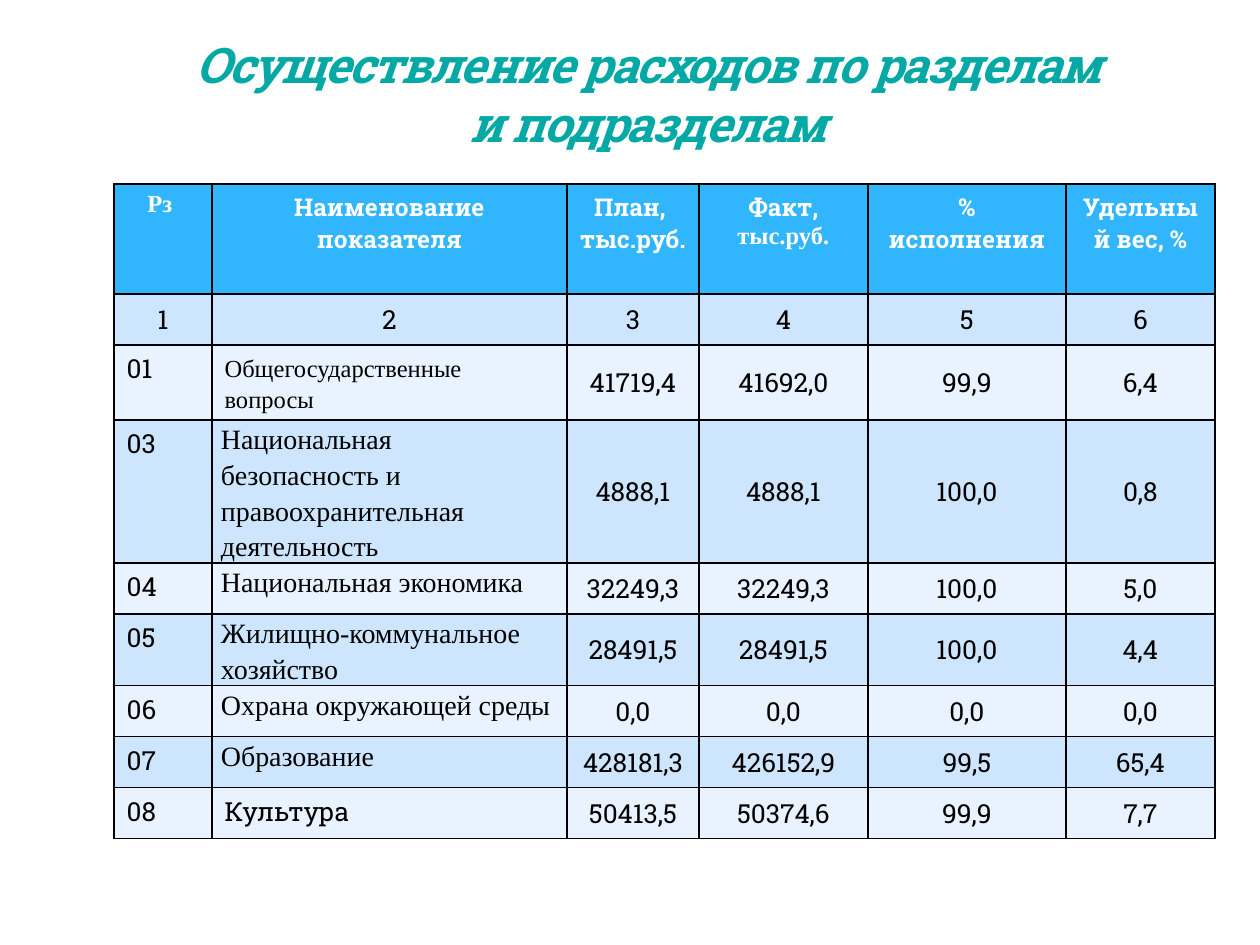
from dataclasses import dataclass
from typing import Optional

from lxml.etree import SubElement
from pptx import Presentation
from pptx.dml.color import RGBColor
from pptx.enum.text import MSO_ANCHOR as Anchor, PP_ALIGN as Align
from pptx.oxml.ns import qn
from pptx.util import Pt

EMU_PER_PX = 914400 // 126


def px(length: int) -> int:
    return length * EMU_PER_PX


@dataclass(frozen=True)
class Theme:
    slab: str = "Roboto Slab"
    serif: str = "Times New Roman"
    title_color: str = "04A8A4"
    header_fill: str = "31B6FD"
    band_fills: tuple = ("CEE5FE", "E8F3FF")
    header_text: str = "FFFFFF"
    body_text: str = "000000"
    border: str = "000000"
    title_size: int = 28
    small_size: int = 14
    body_size: int = 15
    name_size: int = 16


THEME = Theme()


@dataclass(frozen=True)
class CellStyle:
    fonts: tuple = (THEME.slab,)
    size: int = THEME.body_size
    color: str = THEME.body_text
    bold: bool = False
    align: Align = Align.CENTER
    anchor: Anchor = Anchor.MIDDLE
    line_spacing: Optional[float] = None
    tight: bool = False


@dataclass(frozen=True)
class Heading:
    lines: tuple
    fonts: tuple = (THEME.slab,)


@dataclass(frozen=True)
class Section:
    code: str
    name: str
    plan: str
    fact: str
    execution: str
    share: str
    name_style: CellStyle


NUMBER = CellStyle()
CODE = CellStyle(align=Align.LEFT, anchor=Anchor.TOP)
FIRST_NAME = CellStyle((THEME.serif,), THEME.small_size, align=Align.LEFT,
                       anchor=Anchor.TOP, line_spacing=1.15)
NAME = CellStyle((THEME.serif,), THEME.name_size, align=Align.LEFT,
                 anchor=Anchor.TOP, line_spacing=1.15, tight=True)

HEADINGS = (
    Heading(("Рз ",), (THEME.serif,)),
    Heading(("Наименование показателя",)),
    Heading(("План, ", "тыс.руб."), (THEME.slab, THEME.slab)),
    Heading(("Факт,", "тыс.руб."), (THEME.slab, THEME.serif)),
    Heading(("% исполнения",)),
    Heading(("Удельный вес, %",)),
)
SECTIONS = (
    Section("01", "Общегосударственные вопросы",
            "41719,4", "41692,0", "99,9", "6,4", FIRST_NAME),
    Section("03", "Национальная безопасность и правоохранительная деятельность",
            "4888,1", "4888,1", "100,0", "0,8", NAME),
    Section("04", "Национальная экономика",
            "32249,3", "32249,3", "100,0", "5,0", NAME),
    Section("05", "Жилищно-коммунальное хозяйство",
            "28491,5", "28491,5", "100,0", "4,4", NAME),
    Section("06", "Охрана окружающей среды", "0,0", "0,0", "0,0", "0,0", NAME),
    Section("07", "Образование", "428181,3", "426152,9", "99,5", "65,4", NAME),
    Section("08", "Культура", "50413,5", "50374,6", "99,9", "7,7", CODE),
)
COLUMN_WIDTHS = (98, 355, 132, 169, 198, 149)
HEADER_HEIGHT, ROW_HEIGHT = 110, 51


def apply(target, values: dict) -> None:
    for attribute, value in values.items():
        setattr(target, attribute, value)


def add_borders(cell) -> None:
    """Put the four lines ahead of the fill, as the schema orders them."""
    properties = cell._tc.get_or_add_tcPr()
    for position, side in enumerate(("lnL", "lnR", "lnT", "lnB")):
        line = SubElement(properties, qn(f"a:{side}"), w=str(Pt(1)))
        fill = SubElement(line, qn("a:solidFill"))
        SubElement(fill, qn("a:srgbClr"), val=THEME.border)
        properties.insert(position, line)


def fill_cell(cell, lines: tuple, style: CellStyle, fill: str) -> None:
    cell.fill.solid()
    cell.fill.fore_color.rgb = RGBColor.from_string(fill)
    add_borders(cell)
    cell.vertical_anchor = style.anchor
    if style.tight:
        apply(cell, {"margin_left": px(9), "margin_right": px(13),
                     "margin_top": 0, "margin_bottom": 0})
    cell.text = "\n".join(lines)
    for paragraph, font_name in zip(cell.text_frame.paragraphs, style.fonts):
        apply(paragraph, {"alignment": style.align,
                          "line_spacing": style.line_spacing})
        font = paragraph.runs[0].font
        apply(font, {"name": font_name, "size": Pt(style.size), "bold": style.bold})
        font.color.rgb = RGBColor.from_string(style.color)


def format_title(title) -> None:
    apply(title, {"left": px(164), "top": px(96), "width": px(968), "height": px(63)})
    frame = title.text_frame
    apply(frame, {"word_wrap": True, "vertical_anchor": Anchor.BOTTOM})
    frame.text = "Осуществление расходов по разделам и подразделам"
    paragraph = frame.paragraphs[0]
    paragraph.alignment = Align.CENTER
    font = paragraph.runs[0].font
    apply(font, {"name": THEME.slab, "size": Pt(THEME.title_size),
                 "bold": True, "italic": True})
    font.color.rgb = RGBColor.from_string(THEME.title_color)
    font._element.set("spc", "-100")


def add_expenses_table(slide) -> None:
    row_count = len(SECTIONS) + 2
    table = slide.shapes.add_table(
        row_count, len(COLUMN_WIDTHS), px(114), px(184), px(sum(COLUMN_WIDTHS)),
        px(HEADER_HEIGHT + ROW_HEIGHT * (row_count - 1))).table
    for column, width in zip(table.columns, COLUMN_WIDTHS):
        column.width = px(width)
    for row in table.rows:
        row.height = px(ROW_HEIGHT)
    table.rows[0].height = px(HEADER_HEIGHT)

    for column, heading in enumerate(HEADINGS):
        style = CellStyle(heading.fonts, THEME.small_size, THEME.header_text,
                          bold=True, anchor=Anchor.TOP)
        fill_cell(table.cell(0, column), heading.lines, style, THEME.header_fill)
        fill_cell(table.cell(1, column), (str(column + 1),), NUMBER, THEME.band_fills[0])

    for row, section in enumerate(SECTIONS, start=2):
        values = (section.code, section.name, section.plan, section.fact,
                  section.execution, section.share)
        styles = (CODE, section.name_style) + (NUMBER,) * 4
        for column, (value, style) in enumerate(zip(values, styles)):
            fill_cell(table.cell(row, column), (value,), style,
                      THEME.band_fills[(row - 1) % 2])


def main() -> None:
    presentation = Presentation()
    apply(presentation, {"slide_width": px(1260), "slide_height": px(945)})
    slide = presentation.slides.add_slide(presentation.slide_layouts[5])
    add_expenses_table(slide)
    format_title(slide.shapes.title)
    presentation.save("out.pptx")


if __name__ == "__main__":
    main()
